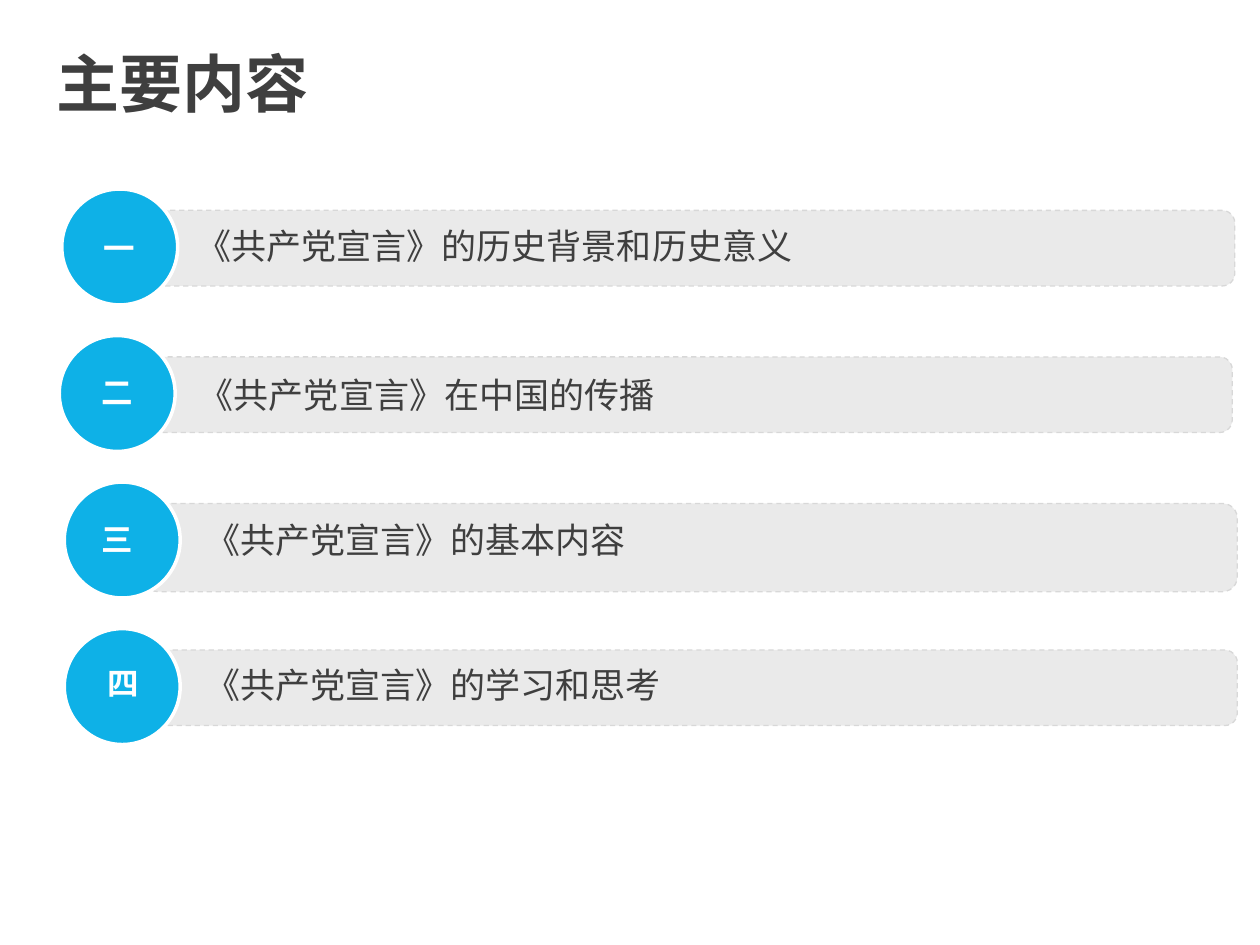
"""Build the contents slide: a title and four numbered topic bars."""
from dataclasses import dataclass

from lxml import etree
from pptx import Presentation
from pptx.dml.color import RGBColor
from pptx.enum.dml import MSO_LINE
from pptx.enum.shapes import MSO_SHAPE
from pptx.enum.text import MSO_ANCHOR, MSO_AUTO_SIZE, PP_ALIGN
from pptx.oxml.ns import qn
from pptx.util import Inches, Pt

ROUNDED, OVAL = MSO_SHAPE.ROUNDED_RECTANGLE, MSO_SHAPE.OVAL
DASH = MSO_LINE.DASH
TOP, MIDDLE = MSO_ANCHOR.TOP, MSO_ANCHOR.MIDDLE
FIT_SHAPE = MSO_AUTO_SIZE.SHAPE_TO_FIT_TEXT
LEFT, CENTER = PP_ALIGN.LEFT, PP_ALIGN.CENTER


@dataclass(frozen=True)
class Theme:
    font: str = "Noto Sans CJK SC"
    ink: str = "3F3F3F"
    white: str = "FFFFFF"
    accent: str = "0EB1E7"
    bar: str = "BCBCBC"
    bar_line: str = "D8D8D8"
    title_size: int = 36
    topic_size: int = 20
    numeral_size: int = 18


THEME = Theme()
FIRST_ROW, ROW_PITCH = 1.5, 1.163
DISC, BAR_WIDTH, BAR_DROP = 0.92, 8.68, 0.17
BAR_INDENT, HANGING = 0.63, 0.38


def add_text(page, words, area, size, color, bold=False, wrap=True, align=LEFT):
    box = page.shapes.add_textbox(*map(Inches, area))
    box.text_frame.word_wrap = wrap
    box.text_frame.vertical_anchor = TOP
    para = box.text_frame.paragraphs[0]
    para.alignment = align
    span = para.add_run()
    span.text = words
    span.font.size, span.font.bold = Pt(size), bold
    span.font.name = THEME.font
    span.font.color.rgb = RGBColor.from_string(color)
    east_asian = etree.SubElement(span.font._element, qn("a:ea"))
    east_asian.set("typeface", THEME.font)
    return box


def add_panel(page, kind, area, fill, line, line_width):
    panel = page.shapes.add_shape(kind, *map(Inches, area))
    panel.shadow.inherit = False
    panel.fill.solid()
    panel.fill.fore_color.rgb = RGBColor.from_string(fill)
    panel.line.color.rgb = RGBColor.from_string(line)
    panel.line.width = Pt(line_width)
    return panel


deck = Presentation()
deck.slide_width, deck.slide_height = Inches(10), Inches(7.5)
page = deck.slides.add_slide(deck.slide_layouts[6])

title = add_text(page, "主要内容", (0.35, 0.36, 3.47, 0.39),
                 THEME.title_size, THEME.ink, bold=True)
title.text_frame.vertical_anchor = MIDDLE
title.text_frame.paragraphs[0].line_spacing = Pt(57.6)

# numeral, topic, disc left, numeral left and drop, topic left and drop, bar height
topics = [
    ("一", "《共产党宣言》的历史背景和历史意义", 0.49, 0.72, 0.27, 1.46, 0.23, 0.6, LEFT),
    ("二", "《共产党宣言》在中国的传播", 0.47, 0.71, 0.25, 1.48, 0.25, 0.6, LEFT),
    ("三", "《共产党宣言》的基本内容", 0.51, 0.71, 0.25, 1.53, 0.24, 0.7, LEFT),
    ("四", "《共产党宣言》的学习和思考", 0.51, 0.75, 0.23, 1.53, 0.23, 0.6, CENTER),
]

for row, topic in enumerate(topics):
    (numeral, words, disc_left, numeral_left, numeral_drop,
     words_left, words_drop, bar_height, align) = topic
    top = FIRST_ROW + row * ROW_PITCH

    bar = add_panel(page, ROUNDED,
                    (disc_left + BAR_INDENT, top + BAR_DROP, BAR_WIDTH, bar_height),
                    THEME.bar, THEME.bar_line, 0.75)
    bar.adjustments[0] = 0.167
    bar.line.dash_style = DASH
    tint = bar.fill._xPr.find(qn("a:solidFill"))[0]
    etree.SubElement(tint, qn("a:alpha")).set("val", "30000")

    label = add_text(page, words, (words_left, top + words_drop, 8.24, 1.47),
                     THEME.topic_size, THEME.ink)
    layout = label.text_frame.paragraphs[0]._p.get_or_add_pPr()
    layout.set("marL", str(Inches(HANGING)))
    layout.set("indent", str(-Inches(HANGING)))

    add_panel(page, OVAL, (disc_left, top, DISC, DISC),
              THEME.accent, THEME.white, 2)
    badge = add_text(page, numeral, (numeral_left, top + numeral_drop, 0.46, 0.4),
                     THEME.numeral_size, THEME.white, True, False, align)
    badge.text_frame.auto_size = FIT_SHAPE

deck.save("out.pptx")
